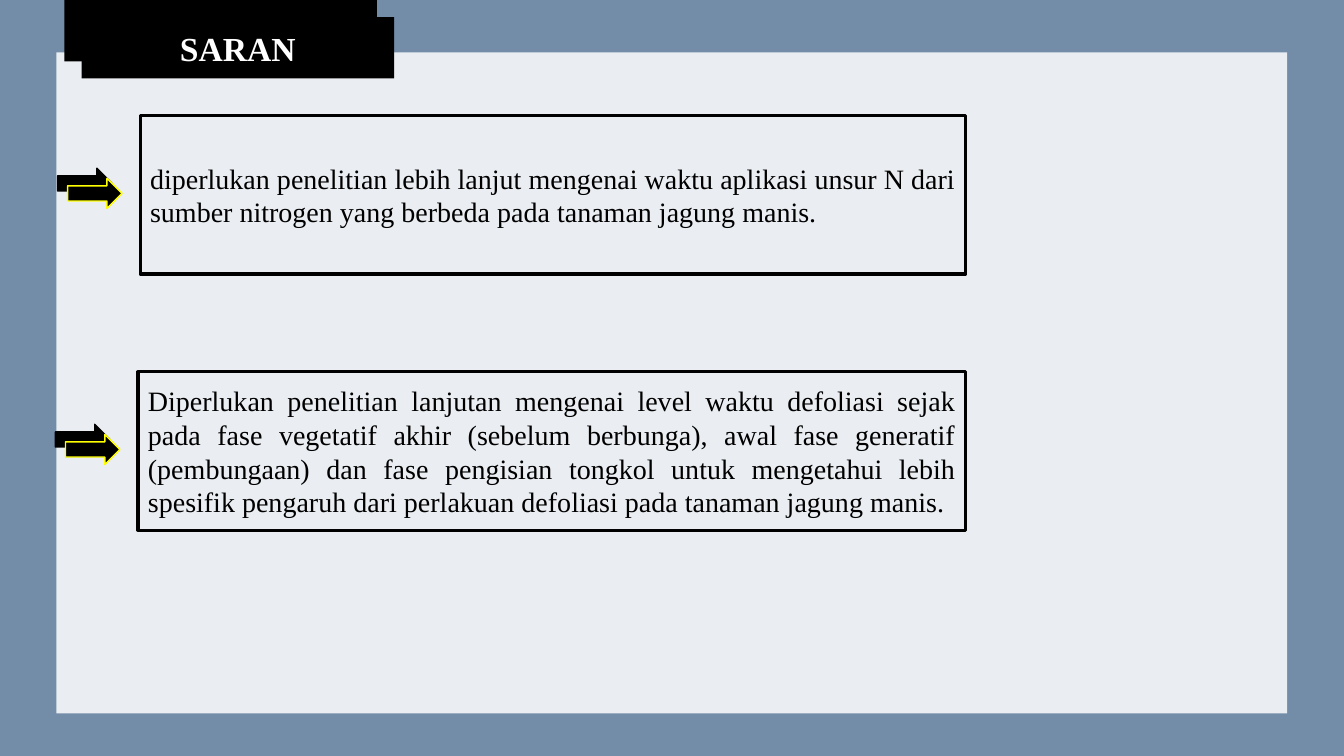
from lxml.etree import SubElement
from pptx import Presentation
from pptx.dml.color import RGBColor
from pptx.enum.shapes import MSO_SHAPE
from pptx.enum.text import MSO_ANCHOR, MSO_AUTO_SIZE, PP_ALIGN
from pptx.oxml.ns import qn
from pptx.util import Pt

COLORS = {"navy": "17406D", "white": "FFFFFF", "black": "000000", "yellow": "FFFF00"}
FONT = "Times New Roman"
SUGGESTIONS = [
    (100.1, 82.8, "diperlukan penelitian lebih lanjut mengenai waktu aplikasi unsur N "
     "dari sumber nitrogen yang berbeda pada tanaman jagung manis."),
    (98.6, 265.7, "Diperlukan penelitian lanjutan mengenai level waktu defoliasi sejak "
     "pada fase vegetatif akhir (sebelum berbunga), awal fase generatif (pembungaan) "
     "dan fase pengisian tongkol untuk mengetahui lebih spesifik pengaruh dari "
     "perlakuan defoliasi pada tanaman jagung manis."),
]
BOX_RIGHT, BOX_HEIGHT = 689.8, 113
ARROW_SHIFT = 7.2


def color(name):
    return RGBColor.from_string(COLORS[name])


def place(shape, left, top, width, height):
    shape.left, shape.top = Pt(left), Pt(top)
    shape.width, shape.height = Pt(width), Pt(height)


def fill_shape(shape, name, alpha=100):
    shape.fill.solid()
    shape.fill.fore_color.rgb = color(name)
    if alpha < 100:
        rgb = shape.fill._xPr.find(qn("a:solidFill"))[0]
        SubElement(rgb, qn("a:alpha")).set("val", str(alpha * 1000))


def add_block(page, left, top, width, height, kind=MSO_SHAPE.RECTANGLE,
              fill=None, alpha=100, line=None, weight=1):
    shape = page.shapes.add_shape(kind, Pt(left), Pt(top), Pt(width), Pt(height))
    shape.shadow.inherit = False
    if fill:
        fill_shape(shape, fill, alpha)
    else:
        shape.fill.background()
    if line:
        shape.line.color.rgb = color(line)
        shape.line.width = Pt(weight)
    else:
        shape.line.fill.background()
    return shape


def write_text(shape, text, size, ink="black", bold=False, align=PP_ALIGN.JUSTIFY):
    frame = shape.text_frame
    frame.word_wrap = True
    frame.auto_size = MSO_AUTO_SIZE.NONE
    frame.vertical_anchor = MSO_ANCHOR.MIDDLE
    para = frame.paragraphs[0]
    para.alignment = align
    span = para.add_run()
    span.text = text
    span.font.name, span.font.size, span.font.bold = FONT, Pt(size), bold
    span.font.color.rgb = color(ink)


def add_suggestion(page, left, top, text):
    box = add_block(page, left, top, BOX_RIGHT - left, BOX_HEIGHT,
                    line="black", weight=2.25)
    write_text(box, text, 20)
    # Double arrow beside the box
    for step, outline in enumerate(("black", "yellow")):
        shift = step * ARROW_SHIFT
        add_block(page, left - 59 + shift, top + 37.4 + shift, 38.9, 21.6,
                  kind=MSO_SHAPE.RIGHT_ARROW, fill="black", line=outline)


def add_title(page, text):
    add_block(page, 46.1, 0, 223.2, 43.9, fill="black")
    title = page.shapes.title
    place(title, 58.3, 12.2, 223.2, 43.9)
    fill_shape(title, "black")
    write_text(title, text, 24, ink="white", bold=True, align=PP_ALIGN.CENTER)
    # Bring the title in front of its backing block
    title.element.getparent().append(title.element)


def main():
    deck = Presentation()
    deck.slide_width, deck.slide_height = Pt(960), Pt(540)
    page = deck.slides.add_slide(deck.slide_layouts[5])

    # Backdrop
    add_block(page, 0, 0, 960, 540, fill="navy", alpha=60)
    add_block(page, 40.3, 37.4, 879.1, 472.3, fill="white", alpha=85)

    # Suggestions and heading
    for left, top, text in SUGGESTIONS:
        add_suggestion(page, left, top, text)
    add_title(page, "SARAN")

    deck.save("out.pptx")


if __name__ == "__main__":
    main()
